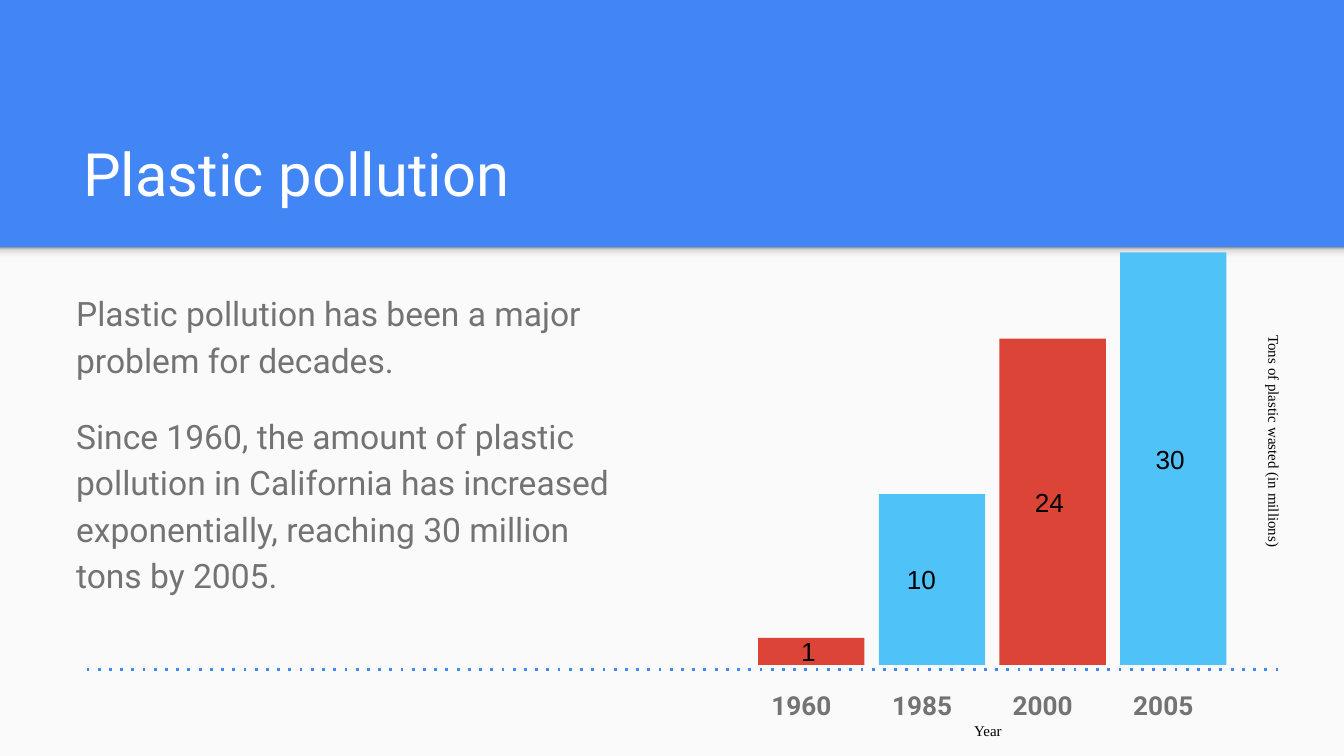
from lxml import etree
from pptx import Presentation
from pptx.dml.color import RGBColor
from pptx.enum.dml import MSO_LINE
from pptx.enum.shapes import MSO_CONNECTOR, MSO_SHAPE
from pptx.enum.text import MSO_ANCHOR, MSO_AUTO_SIZE, PP_ALIGN
from pptx.oxml.ns import qn
from pptx.util import Cm, Pt

RECTANGLE = MSO_SHAPE.RECTANGLE
STRAIGHT = MSO_CONNECTOR.STRAIGHT
ROUND_DOT = MSO_LINE.ROUND_DOT
TOP, MIDDLE, BOTTOM = MSO_ANCHOR.TOP, MSO_ANCHOR.MIDDLE, MSO_ANCHOR.BOTTOM
NO_AUTOFIT = MSO_AUTO_SIZE.NONE
LEFT = PP_ALIGN.LEFT

BLUE = RGBColor(0x42, 0x85, 0xF4)
SKY = RGBColor(0x4F, 0xC3, 0xF7)
RED = RGBColor(0xDB, 0x44, 0x37)
PAPER = RGBColor(0xFA, 0xFA, 0xFA)
GREY = RGBColor(0x73, 0x73, 0x73)
WHITE = RGBColor(0xFF, 0xFF, 0xFF)
BLACK = RGBColor(0x00, 0x00, 0x00)
SHADE_STOPS = [(0, "F9F9F9"), (36, "F9F9F9"), (80, "DEDEDE"), (100, "999999")]
NO_TABLE_STYLE = "{2D5ABB26-0587-4C30-8999-92F81FD0307C}"

INSET = Cm(0.25)
HEADER_BOTTOM = 4.67
BAR_LEFT, BAR_STEP, BAR_WIDTH, BAR_BASE = 14.33, 2.28, 2.01, 12.57


def write(frame, paragraphs, font, spacing=None, anchor=TOP, inset_left=INSET):
    layout = dict(word_wrap=True, auto_size=NO_AUTOFIT, vertical_anchor=anchor,
                  margin_left=inset_left, margin_right=INSET,
                  margin_top=INSET, margin_bottom=INSET)
    for name, value in layout.items():
        setattr(frame, name, value)
    frame.text = "\n".join(paragraphs)
    for paragraph in frame.paragraphs:
        style(paragraph, font, spacing or {})


def style(paragraph, font, spacing):
    paragraph.alignment = LEFT
    for name, value in spacing.items():
        setattr(paragraph, name, value)
    for name, value in font.items():
        if name == "color":
            paragraph.runs[0].font.color.rgb = value
        else:
            setattr(paragraph.runs[0].font, name, value)


title_font = dict(name="Roboto", size=Pt(32), color=WHITE)
body_font = dict(name="Roboto", size=Pt(18), color=GREY)
year_font = dict(name="Roboto", size=Pt(14), color=GREY, bold=True)
value_font = dict(name="Arial", size=Pt(14), color=BLACK)
axis_font = dict(name="Times New Roman", size=Pt(8), color=BLACK)

prs = Presentation()
prs.slide_width, prs.slide_height = Cm(25.4), Cm(14.29)
slide = prs.slides.add_slide(prs.slide_layouts[5])
shapes = slide.shapes

# Blue header as background, pale page below it
slide.background.fill.solid()
slide.background.fill.fore_color.rgb = BLUE
page = shapes.add_shape(RECTANGLE, 0, Cm(HEADER_BOTTOM), Cm(25.4), Cm(9.62))
page.shadow.inherit = False
page.fill.solid()
page.fill.fore_color.rgb = PAPER
page.line.fill.background()

# Soft shade under the header
shade = shapes.add_shape(RECTANGLE, 0, Cm(HEADER_BOTTOM), Cm(25.4), Cm(0.3))
shade.shadow.inherit = False
shade.line.fill.background()
shade.fill.gradient()
shade.fill.gradient_angle = 90
stop_list = shade._element.spPr.find(".//" + qn("a:gsLst"))
for stop in list(stop_list):
    stop_list.remove(stop)
for percent, colour in SHADE_STOPS:
    stop = etree.SubElement(stop_list, qn("a:gs"), pos=str(percent * 1000))
    etree.SubElement(stop, qn("a:srgbClr"), val=colour)

# Title, brought in front of the page
title = shapes.title
title.left, title.top, title.width, title.height = Cm(1.32), Cm(2.06), Cm(22.83), Cm(2.13)
write(title.text_frame, ["Plastic pollution"], title_font, anchor=BOTTOM)

# Body text
body = shapes.add_textbox(Cm(1.19), Cm(5.18), Cm(11.1), Cm(7.52))
write(body.text_frame, [
    "Plastic pollution has been a major problem for decades.",
    "Since 1960, the amount of plastic pollution in California has increased "
    "exponentially, reaching 30 million tons by 2005.",
], body_font, dict(line_spacing=1.15, space_after=Pt(16)))

# Bars: year, tons, height, left inset of the value, colour
bars = [
    ("1960", "1", 0.51, 0.81, RED),
    ("1985", "10", 3.23, 0.53, SKY),
    ("2000", "24", 6.17, 0.67, RED),
    ("2005", "30", 7.8, 0.67, SKY),
]
years_frame = shapes.add_table(1, len(bars), Cm(BAR_LEFT), Cm(12.73),
                               Cm(BAR_STEP * len(bars)), Cm(0.66))
years = years_frame.table
years.first_row = years.horz_banding = False
years._tbl.tblPr.find(qn("a:tableStyleId")).text = NO_TABLE_STYLE
for i, (year, tons, height, inset, colour) in enumerate(bars):
    years.columns[i].width = Cm(BAR_STEP)
    cell = years.cell(0, i)
    cell.fill.background()
    cell.margin_left = cell.margin_right = cell.margin_top = cell.margin_bottom = INSET
    cell.text = year
    style(cell.text_frame.paragraphs[0], year_font, dict(line_spacing=1.15))

    bar = shapes.add_shape(RECTANGLE, Cm(BAR_LEFT + i * BAR_STEP), Cm(BAR_BASE - height),
                           Cm(BAR_WIDTH), Cm(height))
    bar.shadow.inherit = False
    bar.fill.solid()
    bar.fill.fore_color.rgb = colour
    bar.line.fill.background()
    write(bar.text_frame, [tons], value_font, anchor=MIDDLE, inset_left=Cm(inset))

# Dotted baseline
baseline = shapes.add_connector(STRAIGHT, Cm(24.16), Cm(12.65), Cm(1.52), Cm(12.65))
baseline.line.color.rgb = BLUE
baseline.line.width = Pt(1.5)
baseline.line.dash_style = ROUND_DOT
baseline.line._ln.find(qn("a:prstDash")).set("val", "dot")
etree.SubElement(baseline._element.spPr, qn("a:effectLst"))

# Axis labels
for label, left, top, width, height, turn in [
    ("Year", 18.16, 13.39, 1.17, 0.51, 0),
    ("Tons of plastic wasted (in millions)", 21.26, 8.36, 5.51, 0.97, 90),
]:
    axis_label = shapes.add_textbox(Cm(left), Cm(top), Cm(width), Cm(height))
    axis_label.rotation = turn
    write(axis_label.text_frame, [label], axis_font)

prs.save("out.pptx")
